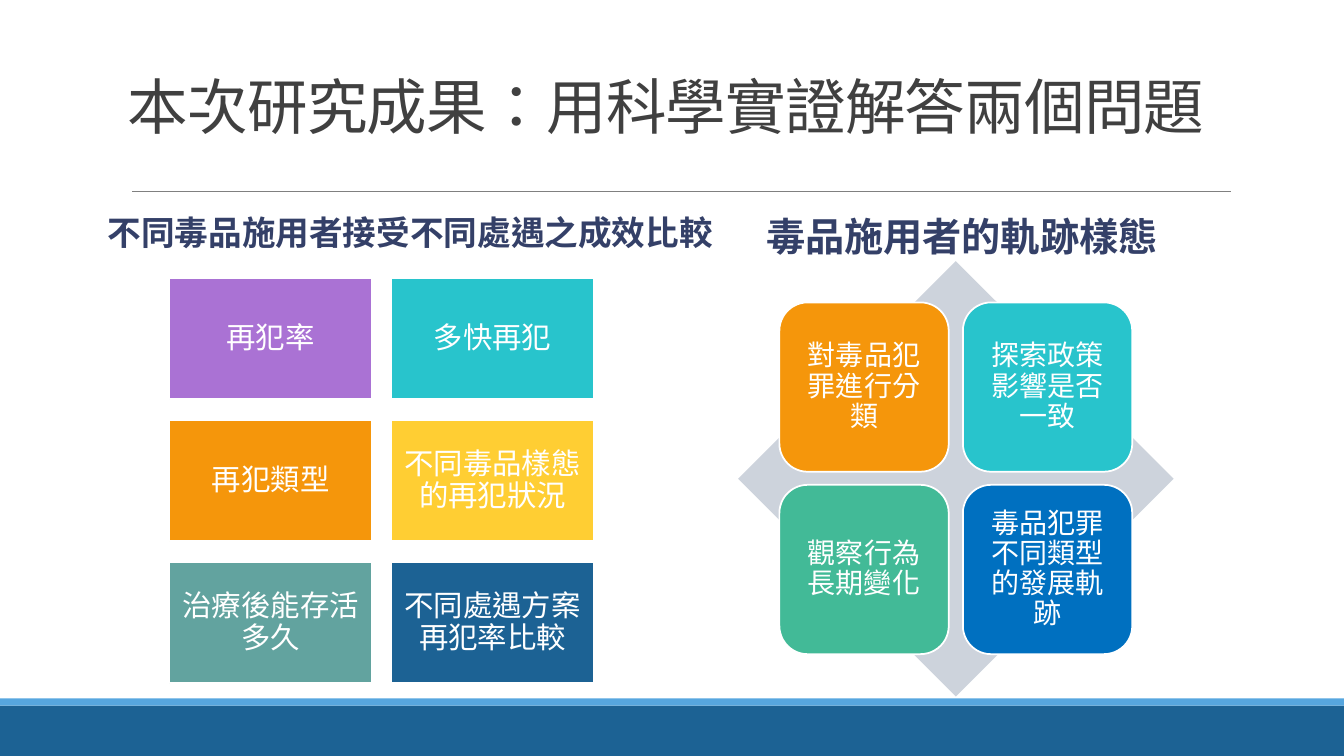
from dataclasses import dataclass

from lxml.etree import SubElement
from pptx import Presentation
from pptx.dml.color import RGBColor
from pptx.enum.shapes import MSO_CONNECTOR, MSO_SHAPE
from pptx.enum.text import MSO_ANCHOR, PP_ALIGN
from pptx.oxml.ns import qn
from pptx.shapes.autoshape import Shape
from pptx.slide import Slide
from pptx.text.text import TextFrame
from pptx.util import Inches, Pt

FONT = "Calibri"
WHITE = RGBColor(0xFF, 0xFF, 0xFF)
TITLE_GREY = RGBColor(0x40, 0x40, 0x40)
RULE_GREY = RGBColor(0x80, 0x80, 0x80)
HEADING_NAVY = RGBColor(0x34, 0x40, 0x68)
DIAMOND_GREY = RGBColor(0xCD, 0xD3, 0xDC)
DEEP_BLUE = RGBColor(0x1C, 0x62, 0x94)
LIGHT_BLUE = RGBColor(0x56, 0xA6, 0xDF)
BLUE = RGBColor(0x00, 0x70, 0xC0)
PURPLE = RGBColor(0xAA, 0x72, 0xD4)
TURQUOISE = RGBColor(0x28, 0xC4, 0xCC)
ORANGE = RGBColor(0xF5, 0x96, 0x0B)
YELLOW = RGBColor(0xFF, 0xCE, 0x33)
SAGE = RGBColor(0x62, 0xA3, 0x9F)
GREEN = RGBColor(0x42, 0xBA, 0x97)


@dataclass(frozen=True)
class Box:
    left: float
    top: float
    width: float
    height: float


@dataclass(frozen=True)
class TextStyle:
    size: float
    color: RGBColor
    bold: bool = False
    line_spacing: float = 0.9
    before: float = 0
    after: float = 0
    tracking: float = 0
    indent: float = 0
    align: PP_ALIGN = PP_ALIGN.LEFT
    anchor: MSO_ANCHOR = MSO_ANCHOR.MIDDLE


@dataclass(frozen=True)
class Tile:
    text: str
    fill: RGBColor


@dataclass(frozen=True)
class TileGrid:
    """Two columns of equal tiles; steps run from one tile's corner to the next."""
    first: Box
    column_step: float
    row_step: float
    preset: MSO_SHAPE
    inset: float
    style: TextStyle
    tiles: tuple[Tile, ...]


@dataclass(frozen=True)
class TextBlock:
    text: str
    box: Box
    style: TextStyle


TITLE = TextBlock(
    "本次研究成果：用科學實證解答兩個問題", Box(1.17, 0.33, 11, 1.13),
    TextStyle(43.2, TITLE_GREY, line_spacing=0.85, tracking=-0.5,
              anchor=MSO_ANCHOR.BOTTOM))
COMPARISON_HEADING = TextBlock(
    "不同毒品施用者接受不同處遇之成效比較", Box(0.97, 1.92, 6.21, 0.81),
    TextStyle(24, HEADING_NAVY, bold=True, before=12, after=2))
TRAJECTORY_HEADING = TextBlock(
    "毒品施用者的軌跡樣態", Box(6.8, 1.96, 5.4, 0.81),
    TextStyle(28, HEADING_NAVY, bold=True, before=12, after=2, indent=0.7))

COMPARISON_GRID = TileGrid(
    Box(1.68, 2.76, 2.01, 1.2), 2.2, 1.41, MSO_SHAPE.RECTANGLE, 0.09,
    TextStyle(21, WHITE, align=PP_ALIGN.CENTER),
    (Tile("再犯率", PURPLE), Tile("多快再犯", TURQUOISE),
     Tile("再犯類型", ORANGE), Tile("不同毒品樣態的再犯狀況", YELLOW),
     Tile("治療後能存活多久", SAGE), Tile("不同處遇方案再犯率比較", DEEP_BLUE)))
TRAJECTORY_GRID = TileGrid(
    Box(7.73, 3, 1.68, 1.68), 1.82, 1.81, MSO_SHAPE.ROUNDED_RECTANGLE, 0.08,
    TextStyle(20, WHITE, align=PP_ALIGN.CENTER),
    (Tile("對毒品犯罪進行分類", ORANGE), Tile("探索政策影響是否一致", TURQUOISE),
     Tile("觀察行為長期變化", GREEN), Tile("毒品犯罪不同類型的發展軌跡", BLUE)))


def write_text(frame: TextFrame, text: str, style: TextStyle) -> None:
    frame.word_wrap = True
    frame.vertical_anchor = style.anchor
    paragraph = frame.paragraphs[0]
    paragraph.alignment = style.align
    paragraph.line_spacing = style.line_spacing
    paragraph.space_before = Pt(style.before)
    paragraph.space_after = Pt(style.after)
    if style.indent:
        paragraph._p.get_or_add_pPr().set("marL", str(Inches(style.indent)))
    run = paragraph.add_run()
    run.text = text
    run.font.name = FONT
    run.font.size = Pt(style.size)
    run.font.bold = style.bold
    run.font.color.rgb = style.color
    properties = run._r.get_or_add_rPr()
    properties.set("lang", "zh-TW")
    if style.tracking:
        properties.set("spc", str(round(style.tracking * 100)))


def add_text_block(slide: Slide, block: TextBlock) -> None:
    box = block.box
    text_box = slide.shapes.add_textbox(
        Inches(box.left), Inches(box.top), Inches(box.width), Inches(box.height))
    write_text(text_box.text_frame, block.text, block.style)


def add_filled_shape(slide: Slide, preset: MSO_SHAPE, box: Box, fill: RGBColor) -> Shape:
    shape = slide.shapes.add_shape(
        preset, Inches(box.left), Inches(box.top), Inches(box.width), Inches(box.height))
    shape.shadow.inherit = False
    shape.fill.solid()
    shape.fill.fore_color.rgb = fill
    shape.line.fill.background()
    return shape


def add_tile_grid(slide: Slide, grid: TileGrid) -> None:
    for index, tile in enumerate(grid.tiles):
        row, column = divmod(index, 2)
        box = Box(grid.first.left + column * grid.column_step,
                  grid.first.top + row * grid.row_step,
                  grid.first.width, grid.first.height)
        shape = add_filled_shape(slide, grid.preset, box, tile.fill)
        shape.line.color.rgb = WHITE
        shape.line.width = Pt(1.25)
        frame = shape.text_frame
        frame.margin_left = frame.margin_right = Inches(grid.inset)
        frame.margin_top = frame.margin_bottom = Inches(grid.inset)
        write_text(frame, tile.text, grid.style)


def add_title_rule(slide: Slide) -> None:
    rule = slide.shapes.add_connector(
        MSO_CONNECTOR.STRAIGHT, Inches(1.31), Inches(1.9), Inches(12.21), Inches(1.9))
    rule.line.color.rgb = RULE_GREY
    rule.line.width = Pt(0.5)
    SubElement(rule._element.spPr, qn("a:effectLst"))


def main() -> None:
    presentation = Presentation()
    presentation.slide_width = Inches(13.33)
    presentation.slide_height = Inches(7.5)
    slide = presentation.slides.add_slide(presentation.slide_layouts[6])

    add_filled_shape(slide, MSO_SHAPE.RECTANGLE, Box(0, 7, 13.33, 0.5), DEEP_BLUE)
    add_filled_shape(slide, MSO_SHAPE.RECTANGLE, Box(0, 6.93, 13.33, 0.07), LIGHT_BLUE)
    add_title_rule(slide)
    add_text_block(slide, TITLE)

    add_text_block(slide, COMPARISON_HEADING)
    add_tile_grid(slide, COMPARISON_GRID)

    add_text_block(slide, TRAJECTORY_HEADING)
    add_filled_shape(slide, MSO_SHAPE.DIAMOND, Box(7.32, 2.59, 4.32, 4.32), DIAMOND_GREY)
    add_tile_grid(slide, TRAJECTORY_GRID)

    presentation.save("out.pptx")


if __name__ == "__main__":
    main()
